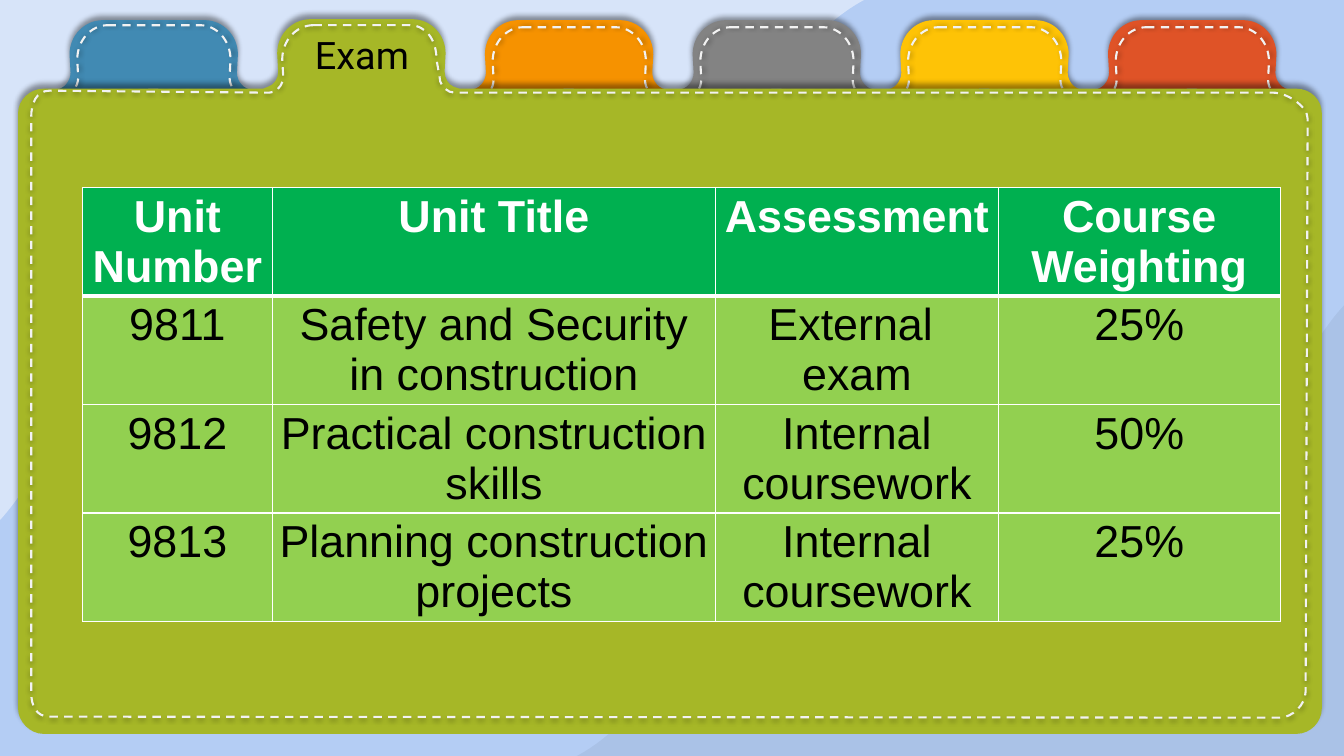
import lxml.etree
import pptx
import pptx.dml.color
import pptx.enum.dml
import pptx.enum.shapes
import pptx.enum.text
import pptx.oxml.ns
import pptx.util

Inches, Pt, qn = pptx.util.Inches, pptx.util.Pt, pptx.oxml.ns.qn

COLORS = {
    "sky": "6D9EEB", "white": "FFFFFF", "black": "000000", "stitch": "F2F2F2",
    "panel": "A6B727", "header": "00B050", "body": "92D050",
    "blue": "418AB3", "orange": "F69200", "gray": "838383",
    "yellow": "FEC306", "red": "DF5327",
}
SLIDE_W, SLIDE_H = 13.33, 7.5
TAB_PITCH = 2.06

# Outlines in inches from their own corner: pairs are lines, sixes are curves.
WAVE = [(7.61, 0), (6.96, 0.69, 6.48, 2.56, 5.64, 2.08),
        (4.8, 1.6, 4.5, 0.93, 3.62, 2.35), (2.74, 3.77, 2.46, 2.25, 1.85, 2.61),
        (1.25, 2.96, 0.73, 4.09, 0, 4.47), (7.61, 4.47)]
TAB = [(0.48, 0), (1.49, 0), (1.67, 0, 1.82, 0.15, 1.82, 0.34), (1.81, 0.52),
       (1.81, 0.61, 1.88, 0.69, 1.97, 0.69), (0.98, 0.68), (0, 0.69),
       (0.09, 0.69, 0.16, 0.61, 0.16, 0.52), (0.15, 0.34),
       (0.15, 0.15, 0.3, 0, 0.48, 0)]
PANEL = [(2.9, 0), (3.91, 0), (4.09, 0, 4.24, 0.15, 4.24, 0.34), (4.23, 0.52),
         (4.23, 0.59, 4.27, 0.65, 4.32, 0.67), (4.38, 0.69), (12.68, 0.69),
         (12.82, 0.69, 12.93, 0.8, 12.93, 0.93), (12.93, 6.84),
         (12.93, 6.97, 12.82, 7.09, 12.68, 7.09), (0.25, 7.09),
         (0.12, 7.09, 0, 6.97, 0, 6.84), (0, 0.93),
         (0, 0.8, 0.12, 0.69, 0.25, 0.69), (2.43, 0.69), (2.48, 0.67),
         (2.54, 0.65, 2.58, 0.59, 2.58, 0.52), (2.57, 0.34),
         (2.57, 0.15, 2.72, 0, 2.9, 0)]
PANEL_STITCH = [(2.8, 0), (3.75, 0), (3.92, 0, 4.02, 0.15, 4.02, 0.34), (4.05, 0.51),
                (4.05, 0.58, 4.09, 0.63, 4.15, 0.66), (4.2, 0.67), (12.32, 0.67),
                (12.45, 0.67, 12.66, 0.8, 12.66, 0.93), (12.64, 6.61),
                (12.64, 6.74, 12.51, 6.87, 12.38, 6.87), (0.18, 6.86),
                (0.05, 6.86, 0, 6.75, 0, 6.62), (0, 0.91),
                (0, 0.78, 0.05, 0.65, 0.18, 0.65), (2.36, 0.67), (2.41, 0.66),
                (2.46, 0.63, 2.5, 0.58, 2.5, 0.51), (2.49, 0.34),
                (2.49, 0.15, 2.63, 0, 2.8, 0)]

HEADINGS = ["Unit Number", "Unit Title", "Assessment", "Course Weighting"]
UNITS = [
    ["9811", "Safety and Security in construction", "External  exam", "25%"],
    ["9812", "Practical construction skills", "Internal coursework", "50%"],
    ["9813", "Planning construction projects", "Internal coursework", "25%"],
]
COLUMN_WIDTHS = [1.88, 4.4, 2.8, 2.8]
ROW_HEIGHT = 1.07


def rgb(name):
    return pptx.dml.color.RGBColor.from_string(COLORS[name])


def add_outline(slide, outline, left, top, sx=1, sy=1):
    """Draw an outline; a negative scale mirrors it about (left, top)."""
    parts = [[(Inches(left + x * sx), Inches(top + y * sy))
              for x, y in zip(part[::2], part[1::2])] for part in outline]
    builder = slide.shapes.build_freeform(*parts[0][0], scale=1.0)
    builder.add_line_segments([part[-1] for part in parts[1:]], close=True)
    shape = builder.convert_to_shape()
    segments = list(shape.element.iter(qn("a:lnTo")))
    for segment, part in zip(segments, parts[1:]):
        if len(part) == 3:
            curve = lxml.etree.Element(qn("a:cubicBezTo"))
            for x, y in part:
                lxml.etree.SubElement(curve, qn("a:pt"), x=str(x - shape.left),
                                      y=str(y - shape.top))
            segment.getparent().replace(segment, curve)
    return shape


def paint(shape, color, alpha=None):
    shape.shadow.inherit = False
    shape.line.fill.background()
    shape.fill.solid()
    shape.fill.fore_color.rgb = rgb(color)
    if alpha:
        srgb = shape.element.spPr.find(qn("a:solidFill")).find(qn("a:srgbClr"))
        lxml.etree.SubElement(srgb, qn("a:alpha"), val=str(alpha * 1000))


def stitch(shape, shadow_angle):
    shape.fill.background()
    shape.line.color.rgb = rgb("stitch")
    shape.line.width = Pt(1.5)
    shape.line.dash_style = pptx.enum.dml.MSO_LINE.DASH
    cast_shadow(shape, 1.5, shadow_angle)


def cast_shadow(shape, distance, angle):
    shape.shadow.inherit = False
    effects = shape.element.spPr.find(qn("a:effectLst"))
    outer = lxml.etree.SubElement(
        effects, qn("a:outerShdw"), blurRad=str(Pt(4)), dist=str(Pt(distance)),
        dir=str(angle * 60000), algn="ctr", rotWithShape="0")
    srgb = lxml.etree.SubElement(outer, qn("a:srgbClr"), val=COLORS["black"])
    lxml.etree.SubElement(srgb, qn("a:alpha"), val="40000")


def write(frame, text, *, size, font, color="black", bold=False):
    paragraph = frame.paragraphs[0]
    paragraph.alignment = pptx.enum.text.PP_ALIGN.CENTER
    run = paragraph.add_run()
    run.text = text
    run.font.size, run.font.name, run.font.bold = Pt(size), font, bold
    run.font.color.rgb = rgb(color)


def add_backdrop(slide):
    slide.background.fill.solid()
    slide.background.fill.fore_color.rgb = rgb("sky")
    haze = slide.shapes.add_shape(pptx.enum.shapes.MSO_SHAPE.RECTANGLE,
                                  0, 0, Inches(SLIDE_W), Inches(SLIDE_H))
    paint(haze, "white", 49)
    paint(add_outline(slide, WAVE, 5.72, 3.03), "black", 5)
    sx, sy = 8.57 / 7.61, 5.16 / 4.47
    paint(add_outline(slide, WAVE, 8.57, 5.16, -sx, -sy), "white", 47)


def add_tab(slide, left, top, color, shadow_distance, stitch_drop):
    tab = add_outline(slide, TAB, left, top)
    paint(tab, color)
    cast_shadow(tab, shadow_distance, 270)
    stitch(add_outline(slide, TAB, left + 0.09, top + stitch_drop, sx=0.91), 0)


def add_panel(slide, left, top):
    panel = add_outline(slide, PANEL, left, top)
    paint(panel, "panel")
    cast_shadow(panel, 3, 270)
    stitch(add_outline(slide, PANEL_STITCH, left + 0.13, top + 0.06), 90)


def place_title(slide, text, left, top, width, height):
    title = slide.shapes.title
    slide.shapes.element.append(title.element)  # bring to front
    title.left, title.top = Inches(left), Inches(top)
    title.width, title.height = Inches(width), Inches(height)
    frame = title.text_frame
    frame.word_wrap = True
    frame.vertical_anchor = pptx.enum.text.MSO_ANCHOR.MIDDLE
    frame.margin_left = frame.margin_right = Inches(0.1)
    frame.margin_top = frame.margin_bottom = Inches(0.1)
    write(frame, text, size=27, font="Roboto")


def set_borders(cell, bottom):
    properties = cell._tc.get_or_add_tcPr()
    widths = {"a:lnL": 1, "a:lnR": 1, "a:lnT": 1, "a:lnB": bottom}
    for index, (side, width) in enumerate(widths.items()):
        line = lxml.etree.Element(qn(side), w=str(Pt(width)))
        fill = lxml.etree.SubElement(line, qn("a:solidFill"))
        lxml.etree.SubElement(fill, qn("a:srgbClr"), val=COLORS["white"])
        properties.insert(index, line)


def add_units_table(slide, left, top):
    rows = [HEADINGS] + UNITS
    table = slide.shapes.add_table(
        len(rows), len(HEADINGS), Inches(left), Inches(top),
        Inches(sum(COLUMN_WIDTHS)), Inches(ROW_HEIGHT * len(rows))).table
    for column, width in zip(table.columns, COLUMN_WIDTHS):
        column.width = Inches(width)
    for r, texts in enumerate(rows):
        heading = r == 0
        for c, text in enumerate(texts):
            cell = table.cell(r, c)
            cell.margin_left = cell.margin_right = Inches(0.04)
            cell.margin_top = cell.margin_bottom = Inches(0.04)
            cell.fill.solid()
            cell.fill.fore_color.rgb = rgb("header" if heading else "body")
            set_borders(cell, bottom=3 if heading else 1)
            write(cell.text_frame, text, size=32, font="Arial", bold=heading,
                  color="white" if heading else "black")


def main():
    deck = pptx.Presentation()
    deck.slide_width, deck.slide_height = Inches(SLIDE_W), Inches(SLIDE_H)
    slide = deck.slides.add_slide(deck.slide_layouts[5])
    add_backdrop(slide)
    tabs = [(5, "red", 2, 0.07), (4, "yellow", 3, 0.07), (3, "gray", 2, 0.07),
            (2, "orange", 3, 0.07), (0, "blue", 3, 0.05)]
    for position, color, shadow_distance, stitch_drop in tabs:
        add_tab(slide, 0.54 + position * TAB_PITCH, 0.2, color, shadow_distance, stitch_drop)
    add_panel(slide, 0.18, 0.19)
    place_title(slide, "Exam", 2.92, 0.29, 1.34, 0.5)
    add_units_table(slide, 0.82, 1.86)
    deck.save("out.pptx")


if __name__ == "__main__":
    main()
